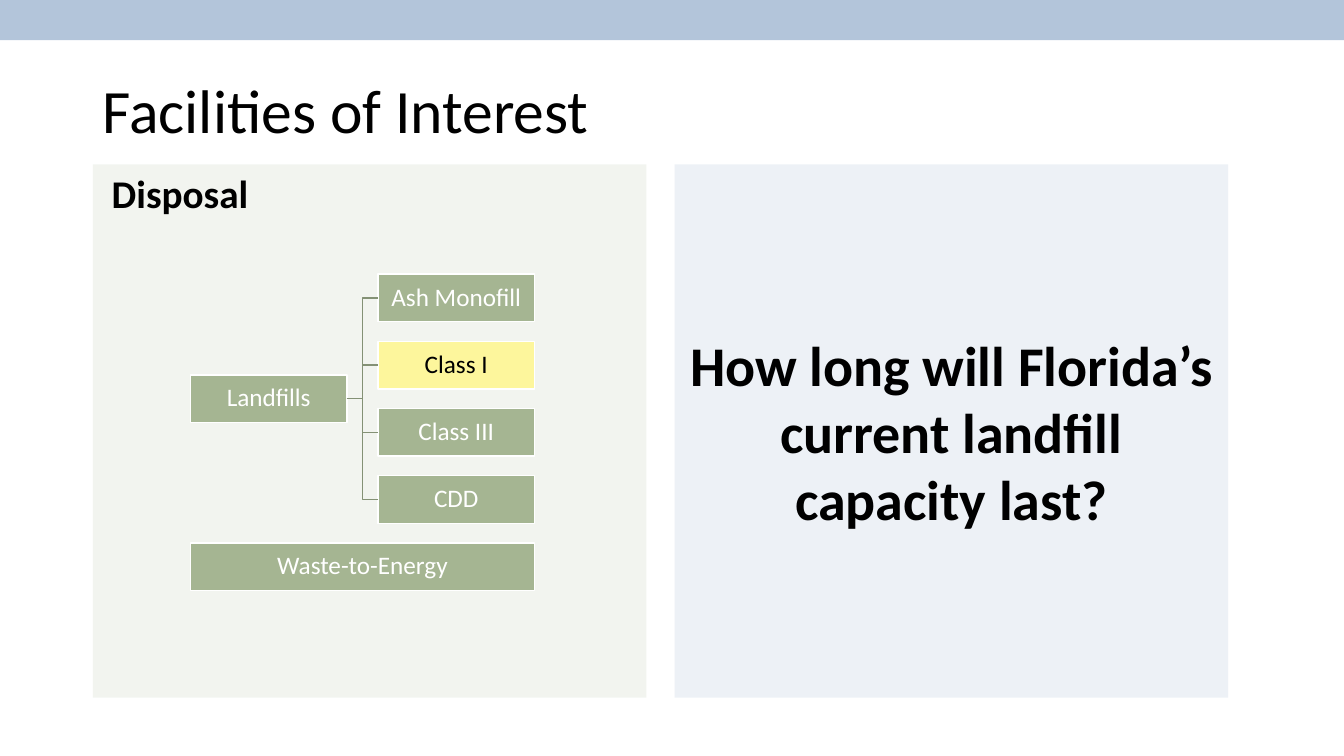
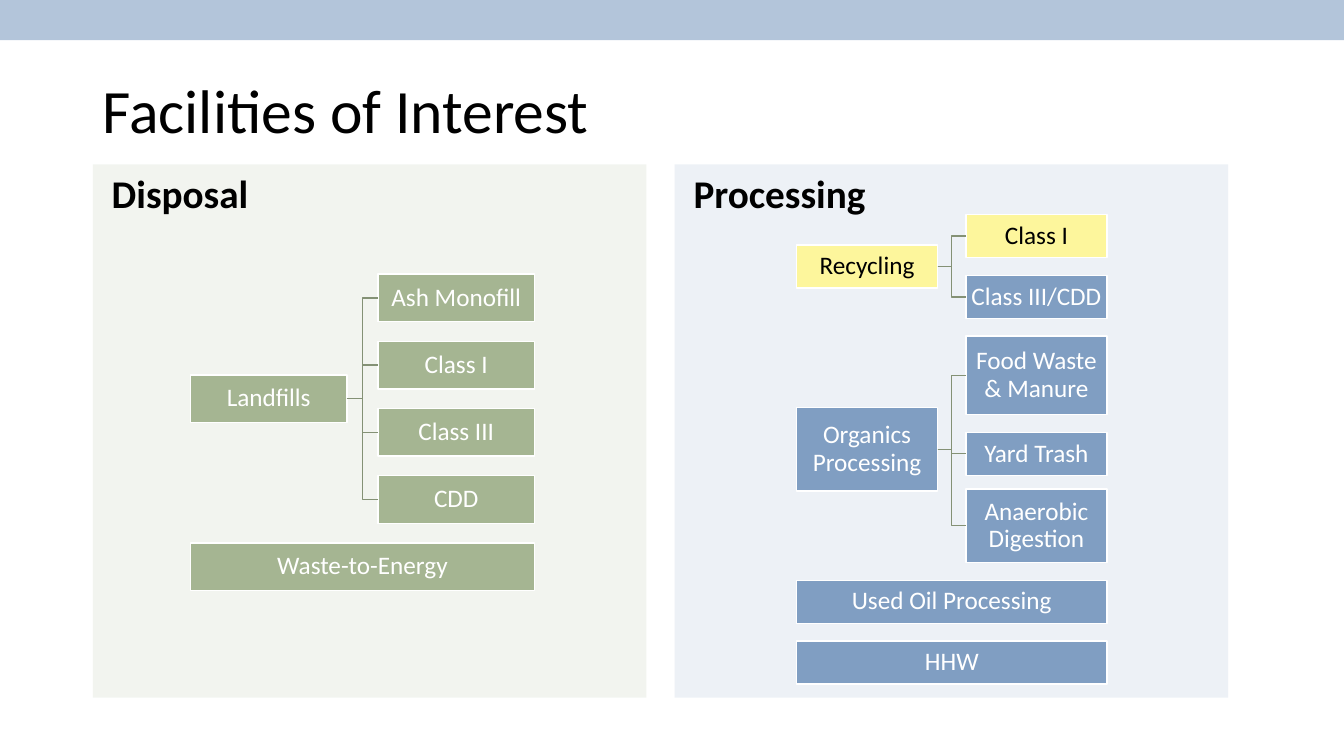
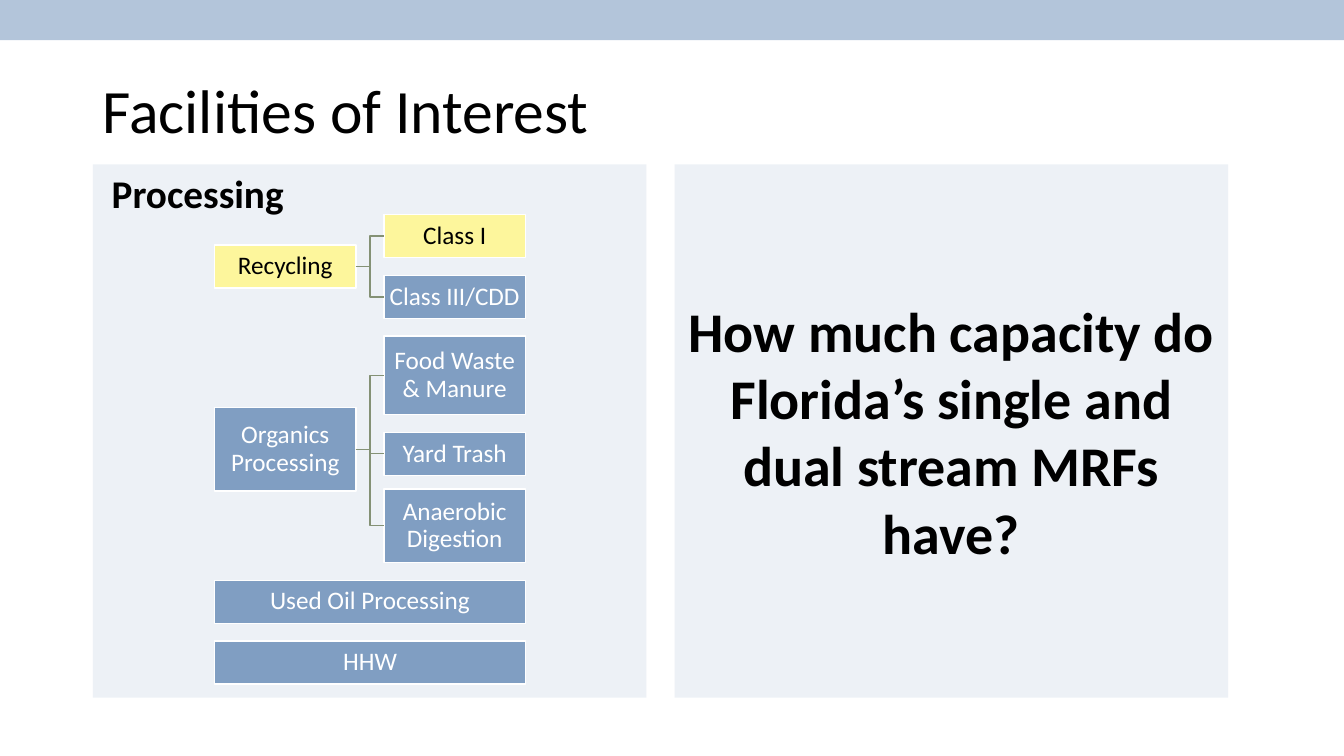
"""Build three slides on waste disposal and processing facilities."""
from dataclasses import dataclass

from lxml.etree import SubElement
from pptx import Presentation
from pptx.dml.color import RGBColor
from pptx.enum.shapes import MSO_CONNECTOR as Connector, MSO_SHAPE as Shape
from pptx.enum.text import MSO_ANCHOR as Anchor, PP_ALIGN as Align
from pptx.oxml.ns import qn
from pptx.util import Inches, Pt

BLACK = RGBColor(0x00, 0x00, 0x00)
WHITE = RGBColor(0xFF, 0xFF, 0xFF)
BAND = RGBColor(0xB3, 0xC5, 0xDA)
GREEN = RGBColor(0xA5, 0xB5, 0x92)
BLUE = RGBColor(0x80, 0x9E, 0xC2)
YELLOW = RGBColor(0xFD, 0xF6, 0x9C)
BRANCH = RGBColor(0x84, 0x91, 0x75)

FONT = "Calibri"
SLIDE_W, SLIDE_H = 13.33, 7.5
BAND_H = 0.4
PANEL_TOP, PANEL_W, PANEL_H = 1.63, 5.49, 5.29
LEFT, RIGHT = 0.92, 6.69
LABEL_INDENT = 0.09
ROW_SHARE, STEM_SHARE, GAP_SHARE = 0.305, 0.2, 0.125
LEFT_SITE, RIGHT_SITE = 1, 3


@dataclass(frozen=True)
class Facility:
    label: str
    height: float = 0
    lift: float = 0
    kinds: tuple = ()


@dataclass(frozen=True)
class Group:
    name: str
    color: RGBColor
    indent: float
    top: float
    box_w: float
    facilities: tuple


DISPOSAL = Group("Disposal", GREEN, 0.97, 2.72, 1.55, (
    Facility("Landfills", kinds=(
        Facility("Ash Monofill"), Facility("Class I"),
        Facility("Class III"), Facility("CDD"))),
    Facility("Waste-to-Energy"),
))
PROCESSING = Group("Processing", BLUE, 1.21, 2.13, 1.4, (
    Facility("Recycling", kinds=(
        Facility("Class I"), Facility("Class III/CDD"))),
    Facility("Organics Processing", height=0.83, kinds=(
        Facility("Food Waste & Manure", height=0.78),
        Facility("Yard Trash"),
        Facility("Anaerobic Digestion", height=0.73, lift=0.04))),
    Facility("Used Oil Processing"),
    Facility("HHW"),
))


def write(frame, text, size, color=BLACK, bold=False, align=Align.LEFT, spacing=1.0):
    frame.text = text
    paragraph = frame.paragraphs[0]
    paragraph.alignment = align
    paragraph.line_spacing = spacing
    font = paragraph.runs[0].font
    font.name, font.size, font.bold = FONT, Pt(size), bold
    font.color.rgb = color


def add_block(slide, left, top, width, height, color, opacity=100):
    block = slide.shapes.add_shape(
        Shape.RECTANGLE, Inches(left), Inches(top), Inches(width), Inches(height))
    block.shadow.inherit = False
    block.fill.solid()
    block.fill.fore_color.rgb = color
    block.line.fill.background()
    if opacity < 100:
        tint = block.fill._xPr.find(qn("a:solidFill")).find(qn("a:srgbClr"))
        SubElement(tint, qn("a:alpha")).set("val", str(opacity * 1000))
    return block


def add_caption(slide, left, top, width, height, text, size,
                anchor=Anchor.TOP, wrap=True, **style):
    caption = slide.shapes.add_textbox(
        Inches(left), Inches(top), Inches(width), Inches(height))
    frame = caption.text_frame
    frame.word_wrap = wrap
    frame.vertical_anchor = anchor
    write(frame, text, size, **style)


def add_facility(slide, left, top, width, height, label, color):
    facility = add_block(slide, left, top, width, height, color)
    facility.line.color.rgb = WHITE
    facility.line.width = Pt(1)
    frame = facility.text_frame
    frame.word_wrap = True
    frame.vertical_anchor = Anchor.MIDDLE
    frame.margin_left = frame.margin_right = Inches(0.01)
    frame.margin_top = frame.margin_bottom = Inches(0.01)
    write(frame, label, 18, BLACK if color == YELLOW else WHITE,
          align=Align.CENTER, spacing=0.9)
    return facility


def add_branch(slide, parent, kind):
    branch = slide.shapes.add_connector(Connector.ELBOW, 0, 0, 0, 0)
    branch.begin_connect(parent, RIGHT_SITE)
    branch.end_connect(kind, LEFT_SITE)
    branch.line.color.rgb = BRANCH
    branch.line.width = Pt(1)
    SubElement(branch._element.spPr, qn("a:effectLst"))


def add_tree(slide, panel_left, group, highlights):
    width = group.box_w
    row_h, stem, gap = (width * share for share in (ROW_SHARE, STEM_SHARE, GAP_SHARE))
    left, top = panel_left + group.indent, group.top

    def place(facility, x, y, w):
        color = YELLOW if facility.label in highlights else group.color
        return add_facility(slide, x, y, w, facility.height or row_h,
                            facility.label, color)

    for facility in group.facilities:
        if not facility.kinds:
            place(facility, left, top, 2 * width + stem)
            top += row_h + gap
            continue
        first_top, kinds = top, []
        for kind in facility.kinds:
            top -= kind.lift
            kinds.append(place(kind, left + width + stem, top, width))
            top += (kind.height or row_h) + gap
        middle = (first_top + top - gap) / 2
        parent = place(facility, left, middle - (facility.height or row_h) / 2, width)
        for kind in kinds:
            add_branch(slide, parent, kind)


def add_panel(slide, left, color):
    add_block(slide, left, PANEL_TOP, PANEL_W, PANEL_H, color, opacity=14)


def add_group(slide, left, group, highlights=()):
    add_panel(slide, left, group.color)
    add_tree(slide, left, group, highlights)
    add_caption(slide, left + LABEL_INDENT, PANEL_TOP, 1.92, 0.57, group.name, 28,
                wrap=False, bold=True)


def add_question(slide, text):
    add_panel(slide, RIGHT, BLUE)
    add_caption(slide, RIGHT, PANEL_TOP, PANEL_W, PANEL_H, text, 40,
                anchor=Anchor.MIDDLE, bold=True, align=Align.CENTER)


def add_slide(deck):
    slide = deck.slides.add_slide(deck.slide_layouts[6])
    add_block(slide, 0, 0, SLIDE_W, BAND_H, BAND)
    add_caption(slide, LEFT, BAND_H, 11.5, 1.45, "Facilities of Interest", 44,
                anchor=Anchor.MIDDLE, spacing=0.9)
    return slide


def main():
    deck = Presentation()
    deck.slide_width, deck.slide_height = Inches(SLIDE_W), Inches(SLIDE_H)
    recycling_focus = ("Recycling", "Class I")

    landfill_slide = add_slide(deck)
    add_group(landfill_slide, LEFT, DISPOSAL, ("Class I",))
    add_question(landfill_slide, "How long will Florida’s current landfill capacity last?")

    overview_slide = add_slide(deck)
    add_group(overview_slide, LEFT, DISPOSAL)
    add_group(overview_slide, RIGHT, PROCESSING, recycling_focus)

    recycling_slide = add_slide(deck)
    add_group(recycling_slide, LEFT, PROCESSING, recycling_focus)
    add_question(recycling_slide,
                 "How much capacity do Florida’s single and dual stream MRFs have?")

    deck.save("out.pptx")


if __name__ == "__main__":
    main()
